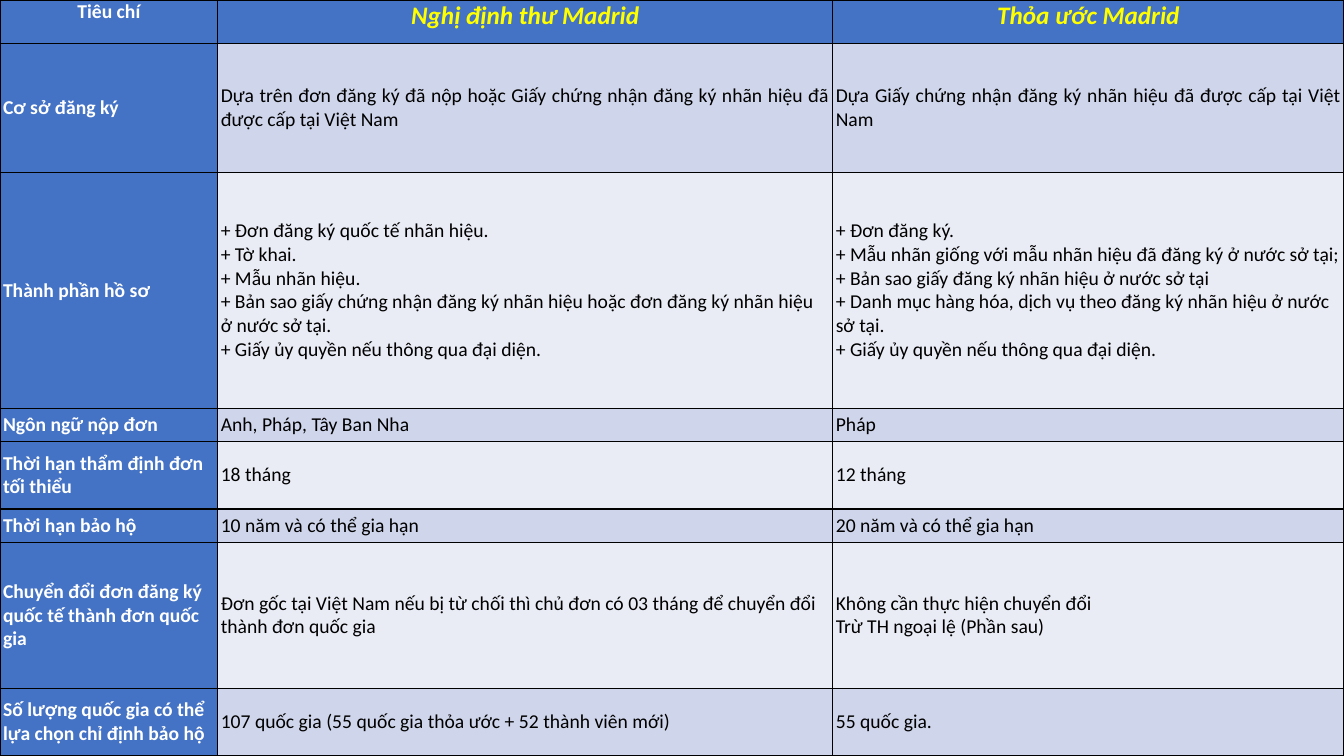
from lxml.etree import SubElement
from pptx import Presentation
from pptx.dml.color import RGBColor
from pptx.enum.text import MSO_ANCHOR, PP_ALIGN
from pptx.oxml.ns import qn
from pptx.util import Inches, Pt

FONT = "Calibri"
BLUE, WHITE, YELLOW, BLACK = "4472C4", "FFFFFF", "FFFF00", "000000"
BANDS = ("CFD5EA", "E9EBF5")
COLUMN_WIDTHS = (2.16, 6.1, 5.07)
ROW_HEIGHTS = (0.43, 1.28, 2.34, 0.33, 0.67, 0.33, 1.45, 0.67)

HEADINGS = ("Tiêu chí", "Nghị định thư Madrid", "Thỏa ước Madrid")
# Criterion, protocol lines, agreement lines
CRITERIA = (
    ("Cơ sở đăng ký",
     ["Dựa trên đơn đăng ký đã nộp hoặc Giấy chứng nhận đăng ký nhãn hiệu đã được cấp tại Việt Nam"],
     ["Dựa Giấy chứng nhận đăng ký nhãn hiệu đã được cấp tại Việt Nam"]),
    ("Thành phần hồ sơ",
     ["+ Đơn đăng ký quốc tế nhãn hiệu.",
      "+ Tờ khai.",
      "+ Mẫu nhãn hiệu.",
      "+ Bản sao giấy chứng nhận đăng ký nhãn hiệu hoặc đơn đăng ký nhãn hiệu ở nước sở tại.",
      "+ Giấy ủy quyền nếu thông qua đại diện."],
     ["+ Đơn đăng ký.",
      "+ Mẫu nhãn giống với mẫu nhãn hiệu đã đăng ký ở nước sở tại;",
      "+ Bản sao giấy đăng ký nhãn hiệu ở nước sở tại",
      "+ Danh mục hàng hóa, dịch vụ theo đăng ký nhãn hiệu ở nước sở tại.",
      "+ Giấy ủy quyền nếu thông qua đại diện."]),
    ("Ngôn ngữ nộp đơn", ["Anh, Pháp, Tây Ban Nha"], ["Pháp"]),
    ("Thời hạn thẩm định đơn tối thiểu", ["18 tháng"], ["12 tháng"]),
    ("Thời hạn bảo hộ", ["10 năm và có thể gia hạn"], ["20 năm và có thể gia hạn"]),
    ("Chuyển đổi đơn đăng ký quốc tế thành đơn quốc gia",
     ["Đơn gốc tại Việt Nam nếu bị từ chối thì chủ đơn có 03 tháng để chuyển đổi thành đơn quốc gia"],
     ["Không cần thực hiện chuyển đổi", "Trừ TH ngoại lệ (Phần sau)"]),
    ("Số lượng quốc gia có thể lựa chọn chỉ định bảo hộ",
     ["107 quốc gia (55 quốc gia thỏa ước + 52 thành viên mới)"],
     ["55 quốc gia."]),
)


def rgb(hex_color):
    return RGBColor.from_string(hex_color)


def add_borders(cell):
    properties = cell._tc.get_or_add_tcPr()
    for side in ("lnL", "lnR", "lnT", "lnB"):
        border = SubElement(properties, qn(f"a:{side}"), w=str(Pt(1)))
        fill = SubElement(border, qn("a:solidFill"))
        SubElement(fill, qn("a:srgbClr"), val=BLACK)


def format_cell(cell, fill, anchor):
    cell.margin_left = cell.margin_right = Inches(0.03)
    cell.margin_top = cell.margin_bottom = 0
    cell.vertical_anchor = anchor
    add_borders(cell)
    cell.fill.solid()
    cell.fill.fore_color.rgb = rgb(fill)


def write_lines(cell, lines, color, size=14, bold=False, italic=False,
                align=PP_ALIGN.LEFT, space_after=0):
    frame = cell.text_frame
    for index, line in enumerate(lines):
        paragraph = frame.add_paragraph() if index else frame.paragraphs[0]
        paragraph.alignment = align
        paragraph.space_after = Pt(space_after)
        run = paragraph.add_run()
        run.text = line
        run.font.name = FONT
        run.font.size = Pt(size)
        run.font.bold = bold
        run.font.italic = italic
        run.font.color.rgb = rgb(color)


def fill_header(table):
    for column, heading in enumerate(HEADINGS):
        cell = table.cell(0, column)
        format_cell(cell, BLUE, MSO_ANCHOR.TOP)
        is_treaty = column > 0
        write_lines(cell, [heading], YELLOW if is_treaty else WHITE,
                    size=18 if is_treaty else 14, bold=True, italic=is_treaty,
                    align=PP_ALIGN.CENTER, space_after=8)


def fill_criteria(table):
    for row, (criterion, *treaties) in enumerate(CRITERIA, start=1):
        label = table.cell(row, 0)
        format_cell(label, BLUE, MSO_ANCHOR.MIDDLE)
        write_lines(label, [criterion], WHITE, bold=True)
        align = PP_ALIGN.JUSTIFY if row == 1 else PP_ALIGN.LEFT
        for column, lines in enumerate(treaties, start=1):
            cell = table.cell(row, column)
            format_cell(cell, BANDS[(row - 1) % 2], MSO_ANCHOR.MIDDLE)
            write_lines(cell, lines, BLACK, align=align)


def add_comparison_table(slide, width, height):
    table = slide.shapes.add_table(len(ROW_HEIGHTS), len(COLUMN_WIDTHS),
                                   0, 0, width, height).table
    for column, column_width in zip(table.columns, COLUMN_WIDTHS):
        column.width = Inches(column_width)
    for row, row_height in zip(table.rows, ROW_HEIGHTS):
        row.height = Inches(row_height)
    fill_header(table)
    fill_criteria(table)


def main():
    presentation = Presentation()
    presentation.slide_width = Inches(13.33)
    presentation.slide_height = Inches(7.5)
    slide = presentation.slides.add_slide(presentation.slide_layouts[6])
    add_comparison_table(slide, presentation.slide_width, presentation.slide_height)
    presentation.save("out.pptx")


if __name__ == "__main__":
    main()
